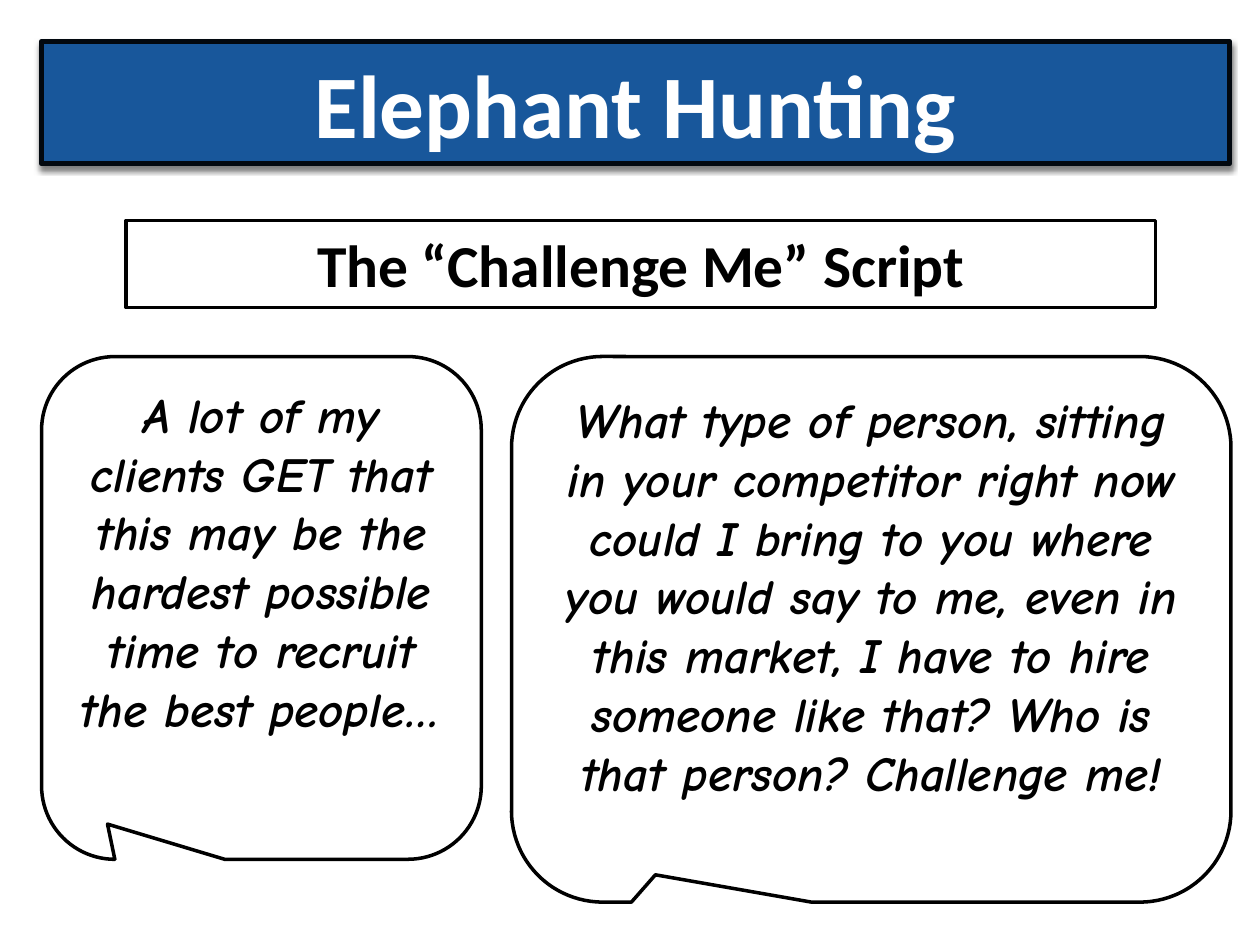
from lxml import etree
from pptx import Presentation
from pptx.dml.color import RGBColor
from pptx.enum.shapes import MSO_SHAPE as SHAPE
from pptx.enum.text import MSO_ANCHOR as ANCHOR, PP_ALIGN as ALIGN
from pptx.oxml.ns import qn
from pptx.util import Inches, Pt

BLUE = RGBColor(0x18, 0x57, 0x9B)
NAVY = RGBColor(0x02, 0x08, 0x0F)
BLACK = RGBColor(0, 0, 0)
WHITE = RGBColor(255, 255, 255)


def add_box(slide, kind, box, fill=WHITE, line=BLACK, weight=2):
    sp = slide.shapes.add_shape(kind, *map(Inches, box))
    sp.shadow.inherit = False
    sp.fill.solid()
    sp.fill.fore_color.rgb = fill
    sp.line.color.rgb = line
    sp.line.width = Pt(weight)
    return sp


def set_text(sp, text, size, font="Calibri", color=BLACK, italic=False,
             anchor=ANCHOR.MIDDLE):
    tf = sp.text_frame
    tf.word_wrap = True
    tf.vertical_anchor = anchor
    p = tf.paragraphs[0]
    p.alignment = ALIGN.CENTER
    r = p.add_run()
    r.text = text
    r.font.name = font
    r.font.size = Pt(size)
    r.font.bold = True
    r.font.italic = italic
    r.font.color.rgb = color


def add_drop_shadow(sp, blur, distance):
    """Cast a half-transparent black shadow straight down."""
    effects = sp._element.spPr.find(qn("a:effectLst"))
    shadow = etree.SubElement(effects, qn("a:outerShdw"), blurRad=str(Pt(blur)),
                              dist=str(Pt(distance)), dir="5400000",
                              rotWithShape="0")
    color = etree.SubElement(shadow, qn("a:srgbClr"), val=str(BLACK))
    etree.SubElement(color, qn("a:alpha"), val="50000")


def add_title(slide, box, text):
    sp = add_box(slide, SHAPE.RECTANGLE, box, BLUE, NAVY, 3)
    add_drop_shadow(sp, blur=3, distance=2)
    set_text(sp, text, 51, color=WHITE)


def add_subtitle(slide, box, text):
    set_text(add_box(slide, SHAPE.RECTANGLE, box), text, 34)


def add_speech_bubble(slide, box, tail, text):
    """Add a bubble; tail is the tip's offset from its centre, in box sizes."""
    sp = add_box(slide, SHAPE.ROUNDED_RECTANGULAR_CALLOUT, box)
    for i, value in enumerate((*tail, 0.167)):
        sp.adjustments[i] = value
    set_text(sp, text, 28, font="Comic Neue", italic=True, anchor=ANCHOR.TOP)


def main():
    prs = Presentation()
    prs.slide_width, prs.slide_height = Inches(10), Inches(7.5)
    slide = prs.slides.add_slide(prs.slide_layouts[6])
    add_title(slide, (0.33, 0.33, 9.43, 0.97), "Elephant Hunting")
    add_subtitle(slide, (1, 1.75, 8.17, 0.69), "The “Challenge Me” Script")
    add_speech_bubble(
        slide, (0.33, 2.83, 3.49, 3.99), (-0.35, 0.43),
        "A lot of my clients GET that this may be the hardest possible time "
        "to recruit the best people…")
    add_speech_bubble(
        slide, (4.06, 2.83, 5.71, 4.33), (-0.3, 0.45),
        "What type of person, sitting in your competitor right now could I "
        "bring to you where you would say to me, even in this market, I have "
        "to hire someone like that? Who is that person? Challenge me!")
    prs.save("out.pptx")


if __name__ == "__main__":
    main()
